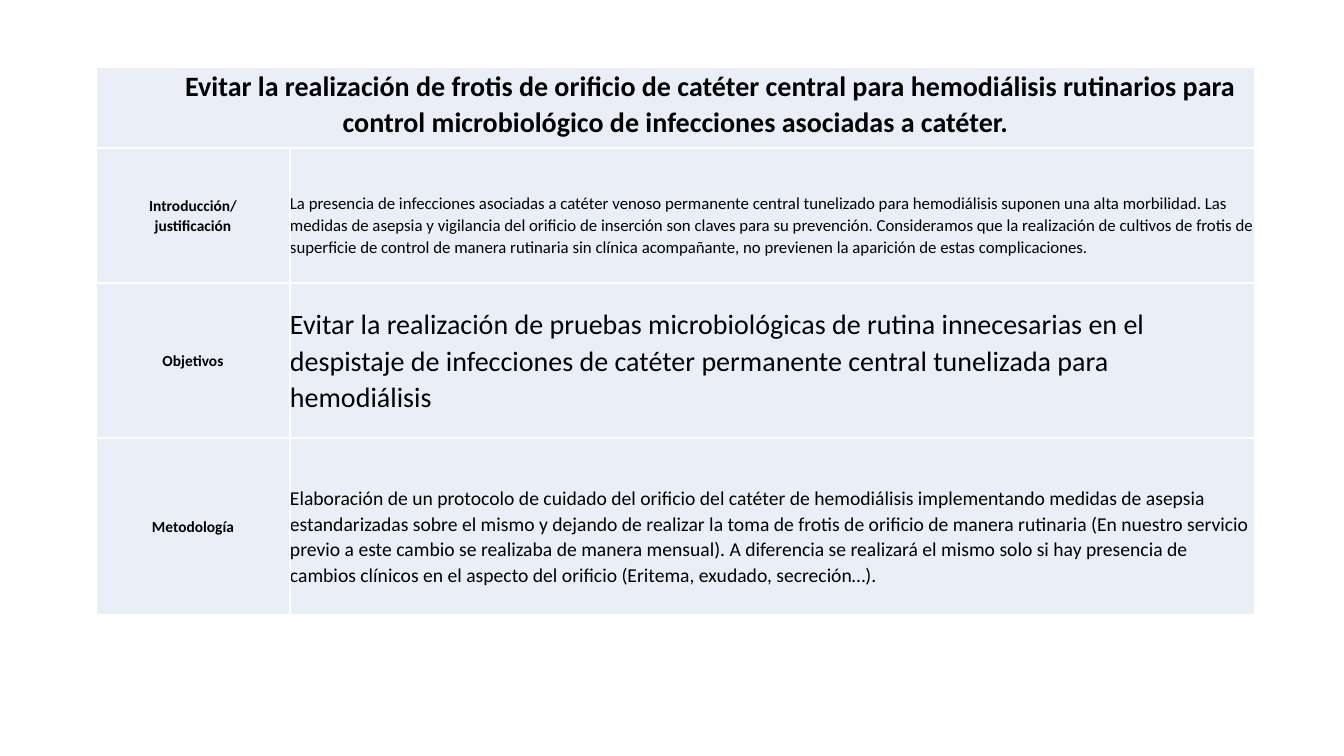
from lxml.etree import SubElement
from pptx import Presentation
from pptx.dml.color import RGBColor
from pptx.enum.text import MSO_ANCHOR, PP_ALIGN
from pptx.oxml.ns import qn
from pptx.util import Emu, Pt

PALE_BLUE = RGBColor(0xEA, 0xEF, 0xF7)
BLACK = RGBColor(0, 0, 0)
WHITE = RGBColor(0xFF, 0xFF, 0xFF)

COLUMN_WIDTHS = [194, 965]
ROW_HEIGHTS = [81, 135, 155, 177]
TITLE_INDENT = 70
BODY_DROP = 20

TITLE = (
    "Evitar la realización de frotis de orificio de catéter central para hemodiálisis "
    "rutinarios para control microbiológico de infecciones asociadas a catéter."
)
# label, body text, body size in points, top margin of the body in px
SECTIONS = [
    ("Introducción/\njustificación",
     "La presencia de infecciones asociadas a catéter venoso permanente central tunelizado "
     "para hemodiálisis suponen una alta morbilidad. Las medidas de asepsia y vigilancia del "
     "orificio de inserción son claves para su prevención. Consideramos que la realización de "
     "cultivos de frotis de superficie de control de manera rutinaria sin clínica acompañante, "
     "no previenen la aparición de estas complicaciones.",
     12, BODY_DROP),
    ("Objetivos",
     "Evitar la realización de pruebas microbiológicas de rutina innecesarias en el despistaje "
     "de infecciones de catéter permanente central tunelizada para hemodiálisis",
     20, 0),
    ("Metodología",
     "Elaboración de un protocolo de cuidado del orificio del catéter de hemodiálisis "
     "implementando medidas de asepsia estandarizadas sobre el mismo y dejando de realizar la "
     "toma de frotis de orificio de manera rutinaria (En nuestro servicio previo a este cambio "
     "se realizaba de manera mensual). A diferencia se realizará el mismo solo si hay presencia "
     "de cambios clínicos en el aspecto del orificio (Eritema, exudado, secreción…).",
     14, BODY_DROP),
]


def px(length):
    """Turn px, at 100.8 to the inch, into EMU."""
    return Emu(round(length * 914400 / 100.8))


def write_cell(cell, text, size, bold, align, anchor=MSO_ANCHOR.MIDDLE):
    cell.margin_left = cell.margin_right = cell.margin_top = cell.margin_bottom = 0
    cell.vertical_anchor = anchor
    cell.text_frame.text = text
    for para in cell.text_frame.paragraphs:
        para.alignment = align
        para.line_spacing = 1.07
        for span in para.runs:
            span.font.name = "Calibri"
            span.font.size = Pt(size)
            span.font.bold = bold
            span.font.color.rgb = BLACK


deck = Presentation()
deck.slide_width, deck.slide_height = px(1344), px(756)
slide = deck.slides.add_slide(deck.slide_layouts[6])

frame = slide.shapes.add_table(
    len(ROW_HEIGHTS), len(COLUMN_WIDTHS),
    px(96), px(67), px(sum(COLUMN_WIDTHS)), px(sum(ROW_HEIGHTS)),
)
table = frame.table
table.first_row = table.horz_banding = False
for column, width in zip(table.columns, COLUMN_WIDTHS):
    column.width = px(width)
for row, height in zip(table.rows, ROW_HEIGHTS):
    row.height = px(height)

for cell in table.iter_cells():
    properties = cell._tc.get_or_add_tcPr()
    for side in ("a:lnL", "a:lnR", "a:lnT", "a:lnB"):
        border = SubElement(properties, qn(side), w=str(Pt(1)))
        border_fill = SubElement(border, qn("a:solidFill"))
        SubElement(border_fill, qn("a:srgbClr"), val=str(WHITE))
    cell.fill.solid()
    cell.fill.fore_color.rgb = PALE_BLUE

title_cell = table.cell(0, 0)
title_cell.merge(table.cell(0, 1))
write_cell(title_cell, TITLE, 20, True, PP_ALIGN.CENTER, MSO_ANCHOR.TOP)
title_format = title_cell.text_frame.paragraphs[0]._p.get_or_add_pPr()
title_format.set("marL", "0")
title_format.set("indent", str(px(TITLE_INDENT)))

for row_index, (label, body, size, drop) in enumerate(SECTIONS, start=1):
    write_cell(table.cell(row_index, 0), label, 11, True, PP_ALIGN.CENTER)
    body_cell = table.cell(row_index, 1)
    write_cell(body_cell, body, size, False, PP_ALIGN.LEFT)
    body_cell.margin_top = px(drop)

deck.save("out.pptx")
